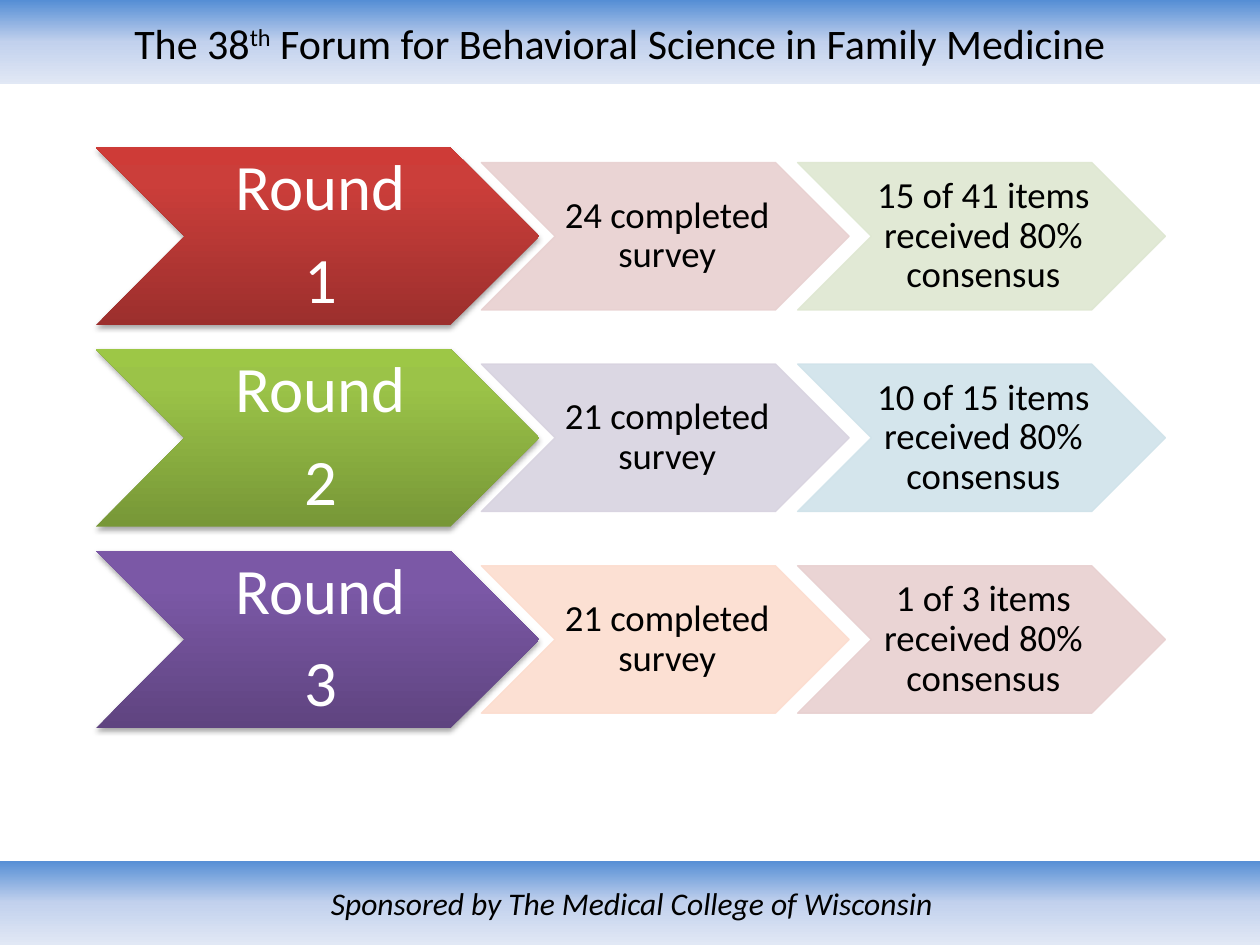
from dataclasses import dataclass

from lxml import etree
from pptx import Presentation
from pptx.dml.color import RGBColor
from pptx.enum.shapes import MSO_SHAPE
from pptx.enum.text import MSO_ANCHOR, MSO_AUTO_SIZE, PP_ALIGN
from pptx.oxml.ns import qn
from pptx.util import Inches, Pt

RECT, CHEVRON = MSO_SHAPE.RECTANGLE, MSO_SHAPE.CHEVRON
MIDDLE, CENTER = MSO_ANCHOR.MIDDLE, PP_ALIGN.CENTER
FIXED = MSO_AUTO_SIZE.NONE


@dataclass(frozen=True)
class Theme:
    font: str = "Calibri"
    dark: str = "000000"
    light: str = "FFFFFF"
    band: tuple = ((0, "558ED5"), (50, "C2D1ED"), (100, "E1E8F5"))
    red: tuple = ((0, "9C2F2D"), (80, "CB3E3A"), (100, "CE3B37"))
    green: tuple = ((0, "779737"), (80, "9BC348"), (100, "9DC746"))
    purple: tuple = ((0, "5F4480"), (80, "7B58A6"), (100, "7C57A8"))
    rose: str = "E8D0D0"
    sage: str = "DEE7D1"
    lilac: str = "D8D3E0"
    sky: str = "D0E3EA"
    peach: str = "FCDDCF"
    title: int = 24
    foot: int = 18
    round: int = 37
    step: int = 21


def add(parent, tag, **attrs):
    node = etree.SubElement(parent, qn(tag))
    for key, val in attrs.items():
        node.set(key, str(val))
    return node


def blend(shape, stops, angle):
    """Fill with a gradient; the angle runs clockwise in degrees."""
    shape.fill.gradient()
    grad = shape._element.spPr.find(qn("a:gradFill"))
    for child in list(grad):
        grad.remove(child)
    group = add(grad, "a:gsLst")
    for pos, color in stops:
        stop = add(group, "a:gs", pos=pos * 1000)
        add(stop, "a:srgbClr", val=color)
    add(grad, "a:lin", ang=angle * 60000, scaled=0)


def fade(fill, color, alpha):
    """Fill with a colour at an opacity given in percent."""
    fill.solid()
    fill.fore_color.rgb = RGBColor.from_string(color)
    node = fill._xPr.find(qn("a:solidFill"))[0]
    add(node, "a:alpha", val=alpha * 1000)


class Deck:
    def __init__(self, style):
        self.style = style
        self.file = Presentation()
        self.file.slide_width = Inches(10)
        self.file.slide_height = Inches(7.5)
        self.slide = self.file.slides.add_slide(self.file.slide_layouts[5])

    def shape(self, kind, box):
        item = self.slide.shapes.add_shape(kind, *map(Inches, box))
        item.shadow.inherit = False
        item.line.fill.background()
        return item

    def label(self, shape, lines, size, color, pads, gap=0, lead=1.0, italic=False):
        """Each line is a list of (text, baseline percent) runs."""
        frame = shape.text_frame
        frame.word_wrap = True
        frame.auto_size = FIXED
        frame.vertical_anchor = MIDDLE
        (frame.margin_left, frame.margin_top,
         frame.margin_right, frame.margin_bottom) = map(Inches, pads)
        for i, line in enumerate(lines):
            para = frame.add_paragraph() if i else frame.paragraphs[0]
            para.alignment = CENTER
            para.line_spacing = lead
            para.space_before = Pt(0)
            para.space_after = Pt(gap)
            for text, base in line:
                run = para.add_run()
                run.text = text
                font = run.font
                font.name, font.size, font.italic = self.style.font, Pt(size), italic
                font.color.rgb = RGBColor.from_string(color)
                if base:
                    font._element.set("baseline", str(base * 1000))

    def title(self, runs):
        head = self.slide.shapes.title
        head.left, head.top, head.width, head.height = map(Inches, (0, 0, 10, 0.67))
        blend(head, self.style.band, 90)
        self.label(head, [runs], self.style.title, self.style.dark,
                   (0.1, 0.05, 0.26, 0.05))

    def footer(self, text):
        foot = self.shape(RECT, (0, 6.83, 10.03, 0.67))
        blend(foot, self.style.band, 90)
        self.label(foot, [[(text, 0)]], self.style.foot, self.style.dark,
                   (0.1, 0.05, 0.1, 0.05), italic=True)

    def round(self, top, number, stops):
        arrow = self.shape(CHEVRON, (0.76, top, 3.52, 1.41))
        blend(arrow, stops, 270)
        glow = add(arrow._element.spPr.find(qn("a:effectLst")), "a:outerShdw",
                   blurRad=int(Pt(3.1)), dist=int(Pt(1.8)), dir=90 * 60000,
                   rotWithShape=0)
        tint = add(glow, "a:srgbClr", val=self.style.dark)
        add(tint, "a:alpha", val=35000)
        self.label(arrow, [[("Round", 0)], [(str(number), 0)]], self.style.round,
                   self.style.light, (0.05, 0.03, 0, 0.03), gap=13, lead=0.9)

    def step(self, left, top, text, color):
        arrow = self.shape(CHEVRON, (left, top, 2.92, 1.17))
        fade(arrow.fill, color, 90)
        fade(arrow.line.fill, color, 90)
        arrow.line.width = Pt(0.75)
        self.label(arrow, [[(text, 0)]], self.style.step, self.style.dark,
                   (0.03, 0.01, 0, 0.01), gap=7, lead=0.9)


def main():
    style = Theme()
    deck = Deck(style)
    deck.title([("The 38", 0), ("th", 30),
                (" Forum for Behavioral Science in Family Medicine", 0)])
    deck.footer("Sponsored by The Medical College of Wisconsin")
    rounds = [
        (style.red, 24, style.rose, "15 of 41", style.sage),
        (style.green, 21, style.lilac, "10 of 15", style.sky),
        (style.purple, 21, style.peach, "1 of 3", style.rose),
    ]
    for i, (stops, done, first, share, last) in enumerate(rounds):
        top = 1.17 + 1.6 * i
        deck.round(top, i + 1, stops)
        deck.step(3.82, top + 0.12, f"{done} completed survey", first)
        deck.step(6.33, top + 0.12, f"{share} items received 80% consensus", last)
    deck.file.save("out.pptx")


if __name__ == "__main__":
    main()
